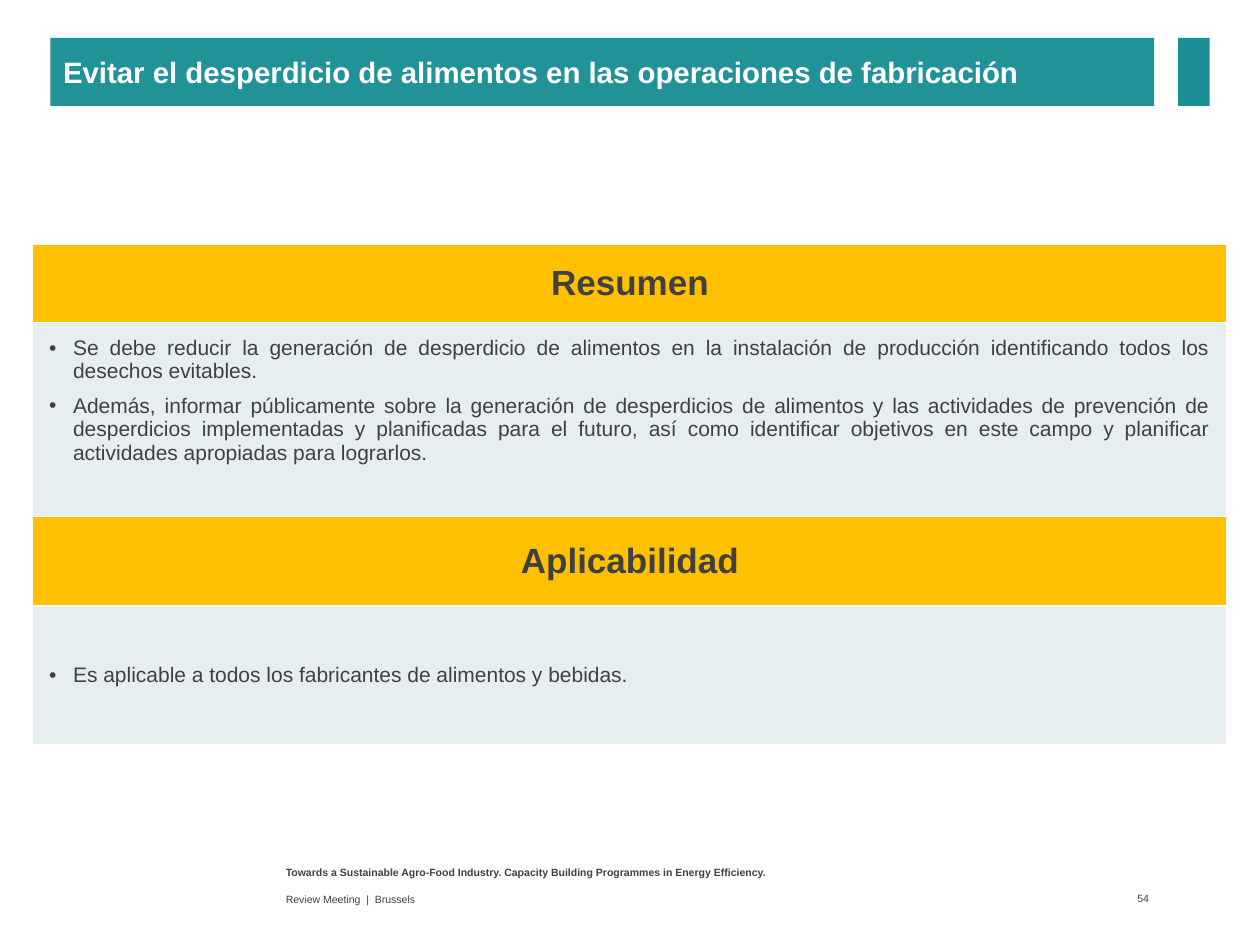
"""Build the slide on avoiding food waste in manufacturing."""
from lxml.etree import SubElement as Sub
from pptx import Presentation
from pptx.dml.color import RGBColor as Rgb
from pptx.enum.shapes import MSO_SHAPE as Shape
from pptx.enum.text import MSO_ANCHOR as Anchor, PP_ALIGN as Align
from pptx.oxml.ns import qn
from pptx.util import Inches, Pt

TITLE = "Evitar el desperdicio de alimentos en las operaciones de fabricación"
PARTS = [
    {"head": "Resumen", "top": 1.94, "rows": (0.62, 1.54),
     "anchor": Anchor.TOP, "pad": 0.11, "items": [
        "Se debe reducir la generación de desperdicio de alimentos en la instalación de "
        "producción identificando todos los desechos evitables.",
        "Además, informar públicamente sobre la generación de desperdicios de alimentos y "
        "las actividades de prevención de desperdicios implementadas y planificadas para el "
        "futuro, así como identificar objetivos en este campo y planificar actividades "
        "apropiadas para lograrlos."]},
    {"head": "Aplicabilidad", "top": 4.1, "rows": (0.71, 1.1),
     "anchor": Anchor.MIDDLE, "pad": 0.06, "items": [
        "Es aplicable a todos los fabricantes de alimentos y bebidas."]},
]
NOTES = [
    ("Towards a Sustainable Agro-Food Industry. Capacity Building Programmes in Energy "
     "Efficiency.", (2.17, 6.82, 5.5, 0.21), "strong", Anchor.TOP, Align.LEFT, 0.1),
    ("Review Meeting  |  Brussels", (2.17, 7.04, 5.5, 0.19), "note",
     Anchor.MIDDLE, Align.LEFT, 0.1),
    ("54", (8.6, 7.03, 0.56, 0.2), "note", Anchor.MIDDLE, Align.RIGHT, 0.04),
]
THEME = {
    "font": "Arial", "bar": "209298", "tab": "1B8E95",
    "head_fill": "FFC000", "body_fill": "E7EEEF", "edge": "FFFFFF",
    "title": (16.8, True, "FFFFFF"), "head": (20, True, "404040"),
    "body": (12, False, "404040"), "strong": (6, True, "404040"),
    "note": (6, False, "404040"),
}
LEFT, WIDTH = 0.26, 9.48
BAR_TOP, BAR_HIGH = 0.3, 0.54


def put(obj, vals):
    for key, val in vals.items():
        setattr(obj, key, val)


def box(*at):
    return [Inches(n) for n in at]


def paint(obj, tint):
    obj.fill.solid()
    obj.fill.fore_color.rgb = Rgb.from_string(THEME[tint])


def style(para, role, align):
    size, bold, tint = THEME[role]
    para.alignment = align
    put(para.font, {"name": THEME["font"], "size": Pt(size), "bold": bold})
    para.font.color.rgb = Rgb.from_string(tint)


def write(frame, text, role, align, anchor, right=0.1):
    put(frame, {"word_wrap": True, "vertical_anchor": anchor,
                "margin_left": Inches(0.1), "margin_right": Inches(right),
                "margin_top": Inches(0.05), "margin_bottom": Inches(0.05)})
    frame.text = text
    style(frame.paragraphs[0], role, align)


def edge(cell):
    props = cell._tc.get_or_add_tcPr()
    for spot, side in enumerate(("lnL", "lnR", "lnT", "lnB")):
        line = Sub(props, qn("a:" + side), w=str(Pt(1)))
        props.insert(spot, line)
        Sub(Sub(line, qn("a:solidFill")), qn("a:srgbClr"), val=THEME["edge"])


def bullets(cell, items):
    for n, item in enumerate(items):
        frame = cell.text_frame
        para = frame.add_paragraph() if n else frame.paragraphs[0]
        para.text = item
        para.space_after = Pt(6)
        props = para._p.get_or_add_pPr()
        props.set("marL", str(Inches(0.19)))
        props.set("indent", str(-Inches(0.19)))
        Sub(props, qn("a:buFont"), typeface=THEME["font"])
        Sub(props, qn("a:buChar"), char="•")
        style(para, "body", Align.JUSTIFY)


def panel(slide, part):
    rows = part["rows"]
    at = box(LEFT, part["top"], WIDTH, sum(rows))
    table = slide.shapes.add_table(2, 1, *at).table
    put(table, {"first_row": False, "horz_banding": False})
    for row, high in zip(table.rows, rows):
        row.height = Inches(high)
    head, body = table.cell(0, 0), table.cell(1, 0)
    for cell, tint in ((head, "head_fill"), (body, "body_fill")):
        paint(cell, tint)
        edge(cell)
    head.vertical_anchor = Anchor.MIDDLE
    head.text = part["head"]
    style(head.text_frame.paragraphs[0], "head", Align.CENTER)
    put(body, {"vertical_anchor": part["anchor"],
               "margin_left": Inches(0.13), "margin_right": Inches(0.13),
               "margin_top": Inches(part["pad"]), "margin_bottom": Inches(0.06)})
    bullets(body, part["items"])


def main():
    deck = Presentation()
    put(deck, {"slide_width": Inches(10), "slide_height": Inches(7.5)})
    slide = deck.slides.add_slide(deck.slide_layouts[5])

    title = slide.shapes.title
    put(title, dict(zip(("left", "top", "width", "height"),
                        box(0.4, BAR_TOP, 8.76, BAR_HIGH))))
    paint(title, "bar")
    write(title.text_frame, TITLE, "title", Align.LEFT, Anchor.MIDDLE)

    tab = slide.shapes.add_shape(Shape.RECTANGLE, *box(9.35, BAR_TOP, 0.25, BAR_HIGH))
    tab.shadow.inherit = False
    tab.line.fill.background()
    paint(tab, "tab")

    for part in PARTS:
        panel(slide, part)
    for text, at, role, anchor, align, right in NOTES:
        note = slide.shapes.add_textbox(*box(*at))
        write(note.text_frame, text, role, align, anchor, right)
    deck.save("out.pptx")


if __name__ == "__main__":
    main()
